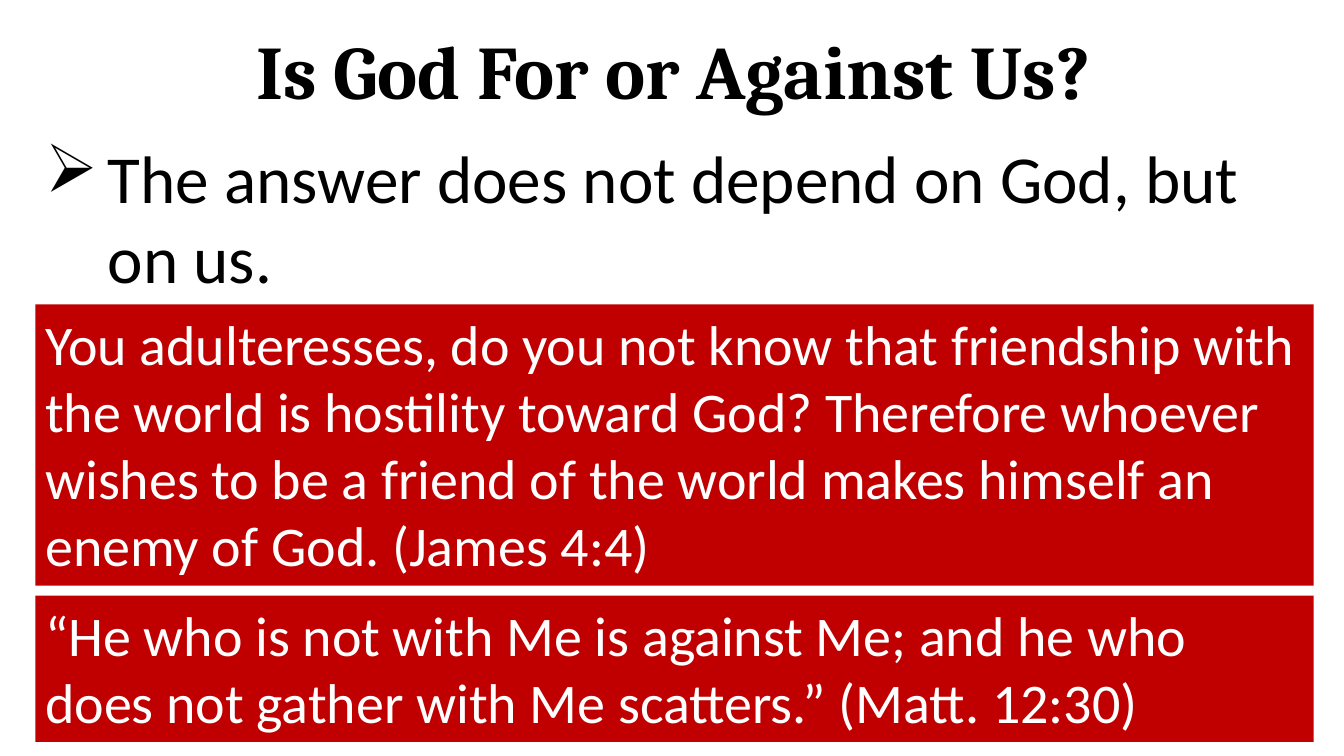
from lxml import etree
from pptx import Presentation
from pptx.dml.color import RGBColor
from pptx.enum.shapes import MSO_SHAPE
from pptx.enum.text import MSO_ANCHOR, PP_ALIGN
from pptx.oxml.ns import qn
from pptx.util import Pt

PX = 9144
BLACK = RGBColor(0x00, 0x00, 0x00)
WHITE = RGBColor(0xFF, 0xFF, 0xFF)
RED = RGBColor(0xC0, 0x00, 0x00)
RECTANGLE = MSO_SHAPE.RECTANGLE
LEFT, CENTER = PP_ALIGN.LEFT, PP_ALIGN.CENTER
TOP, MIDDLE = MSO_ANCHOR.TOP, MSO_ANCHOR.MIDDLE

TITLE = "Is God For or Against Us?"
ANSWER = "The answer does not depend on God, but on us."
MARGIN, WIDTH = 35, 1268
VERSES = [
    (302, 279, "You adulteresses, do you not know that friendship with the world "
     "is hostility toward God? Therefore whoever wishes to be a friend of the "
     "world makes himself an enemy of God. (James 4:4)"),
    (591, 145, "“He who is not with Me is against Me; and he who does not gather "
     "with Me scatters.” (Matt. 12:30)"),
]


def scaled(box):
    """Turn a box in px into EMU."""
    return [length * PX for length in box]


def write(shape, text, size, color, font="Calibri", align=LEFT, anchor=TOP):
    """Write one wrapped paragraph into a shape and return it."""
    frame = shape.text_frame
    frame.word_wrap = True
    frame.vertical_anchor = anchor
    para = frame.paragraphs[0]
    para.alignment = align
    span = para.add_run()
    span.text = text
    span.font.name = font
    span.font.size = Pt(size)
    span.font.color.rgb = color
    return para


def add_title(page, box):
    """Place the centred bold heading."""
    shape = page.shapes.add_textbox(*scaled(box))
    para = write(shape, TITLE, 54, BLACK, "Cambria", CENTER, MIDDLE)
    para.line_spacing = 0.9
    para.runs[0].font.bold = True


def add_answer(page, box, indent=62):
    """Place the statement with its arrow bullet and hanging indent."""
    shape = page.shapes.add_textbox(*scaled(box))
    para = write(shape, ANSWER, 48, BLACK)
    properties = para._p.get_or_add_pPr()
    properties.set("marL", str(indent * PX))
    properties.set("indent", str(-indent * PX))
    etree.SubElement(properties, qn("a:buChar")).set("char", "➢")


def add_verse(page, box, text):
    """Place a red panel that quotes a verse."""
    panel = page.shapes.add_shape(RECTANGLE, *scaled(box))
    panel.shadow.inherit = False
    panel.fill.solid()
    panel.fill.fore_color.rgb = RED
    panel.line.fill.background()
    write(panel, text, 40, WHITE)


def main():
    """Build the slide and save it."""
    deck = Presentation()
    deck.slide_width, deck.slide_height = scaled((1333, 750))
    page = deck.slides.add_slide(deck.slide_layouts[6])
    add_title(page, (148, 13, 1040, 122))
    add_answer(page, (MARGIN, 130, WIDTH, 172))
    for top, height, text in VERSES:
        add_verse(page, (MARGIN, top, WIDTH, height), text)
    deck.save("out.pptx")


if __name__ == "__main__":
    main()
